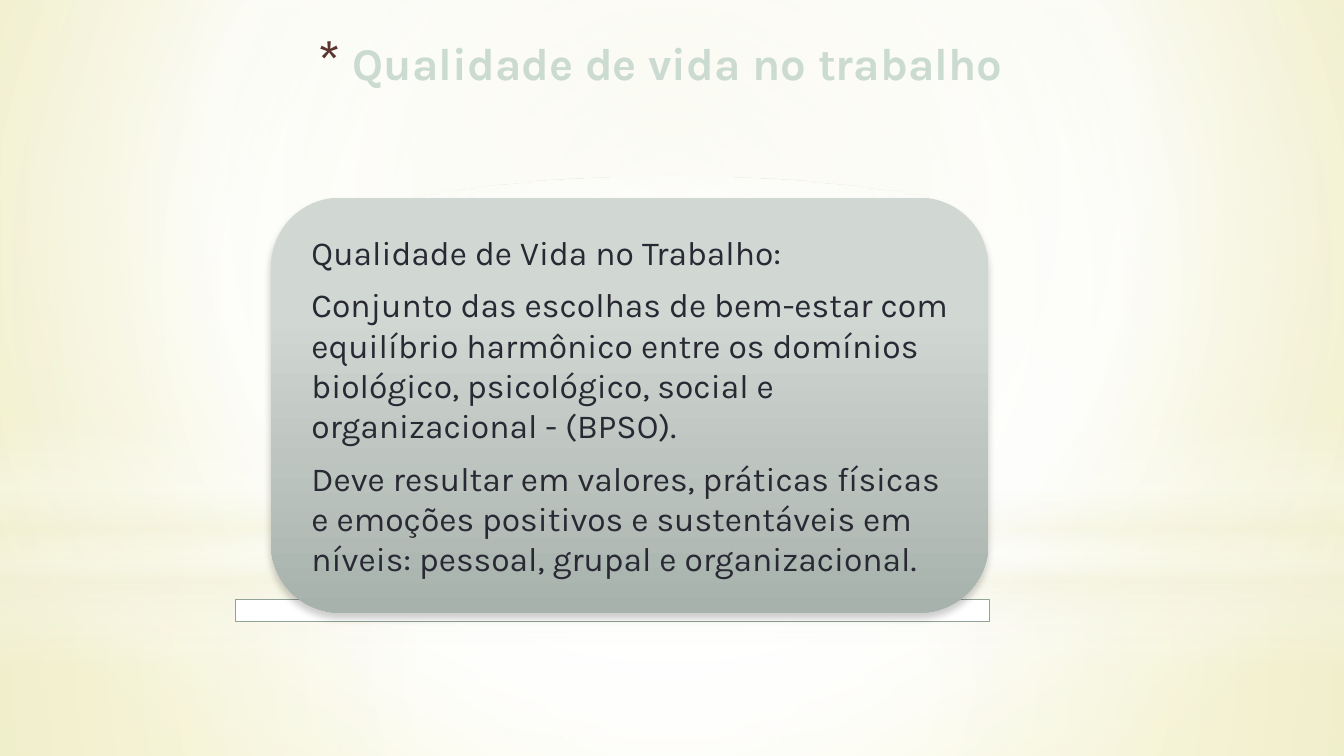
from lxml import etree
from pptx import Presentation
from pptx.dml.color import RGBColor
from pptx.enum.shapes import MSO_SHAPE as Kind
from pptx.enum.text import MSO_ANCHOR as Anchor, PP_ALIGN as Align
from pptx.oxml import parse_xml
from pptx.oxml.ns import nsdecls, qn
from pptx.util import Cm, Pt

WIDE, HIGH = 33.87, 19.05
CENTRE = (50, 50, 50, 50)


def tint(code):
    return RGBColor.from_string(code)


def blend(owner, root, stops, focus=None):
    """Fill owner with (position, colour, opacity) stops, circular if focus is given."""
    owner.fill.gradient()
    old = root.find(".//" + qn("a:gradFill"))
    marks = "".join(
        f'<a:gs pos="{pos * 1000}"><a:srgbClr val="{code}">'
        f'<a:alpha val="{alpha * 1000}"/></a:srgbClr></a:gs>'
        for pos, code, alpha in stops)
    if focus:
        sides = " ".join(f'{side}="{part * 1000}"' for side, part in zip("ltrb", focus))
        way = f'<a:path path="circle"><a:fillToRect {sides}/></a:path>'
    else:
        way = '<a:lin ang="5400000" scaled="0"/>'
    new = parse_xml(f'<a:gradFill {nsdecls("a")} rotWithShape="1">'
                    f'<a:gsLst>{marks}</a:gsLst>{way}</a:gradFill>')
    old.getparent().replace(old, new)


class Deck:
    font = "Karla"
    ink = "292934"
    pale = "CBDBD1"
    accent = "5B352E"

    def __init__(self):
        self.file = Presentation()
        self.file.slide_width, self.file.slide_height = Cm(WIDE), Cm(HIGH)
        self.slide = self.file.slides.add_slide(self.file.slide_layouts[5])

    def ground(self, stops, focus):
        blend(self.slide.background, self.slide.element, stops, focus)

    def shape(self, kind, box, stops=None, focus=None):
        form = self.slide.shapes.add_shape(kind, *map(Cm, box))
        form.shadow.inherit = False
        form.line.fill.background()
        if stops:
            blend(form, form.element, stops, focus)
        return form

    def strip(self, box, fill, line):
        form = self.shape(Kind.RECTANGLE, box)
        form.fill.solid()
        form.fill.fore_color.rgb = tint(fill)
        form.line.color.rgb = tint(line)
        form.line.width = Pt(0.75)

    def card(self, box, stops):
        form = self.shape(Kind.ROUNDED_RECTANGLE, box, stops)
        effects = form.element.find(".//" + qn("a:effectLst"))
        shade = etree.SubElement(effects, qn("a:outerShdw"), blurRad=str(Pt(5)),
                                 dist=str(Pt(4)), dir="5400000", rotWithShape="0")
        colour = etree.SubElement(shade, qn("a:srgbClr"), val="000000")
        etree.SubElement(colour, qn("a:alpha"), val="20000")

    def style(self, para, text, size, code, bold=False):
        para.text = text
        para.font.name, para.font.size = self.font, Pt(size)
        para.font.bold, para.font.color.rgb = bold, tint(code)

    def title(self, box, text):
        head = self.slide.shapes.title
        head.left, head.top, head.width, head.height = map(Cm, box)
        head.element.getparent().append(head.element)  # in front of the backdrop
        frame = head.text_frame
        frame.word_wrap, frame.vertical_anchor = True, Anchor.TOP
        para = frame.paragraphs[0]
        self.style(para, text, 32.4, self.pale, True)
        para.alignment = Align.RIGHT
        props = head.element.find(".//" + qn("a:pPr"))
        props.set("marL", str(Cm(0.89)))
        props.set("indent", str(Cm(-0.89)))
        bullet = parse_xml(
            f'<a:pPr {nsdecls("a")}><a:buClr><a:srgbClr val="{self.accent}"/></a:buClr>'
            f'<a:buSzPct val="128000"/><a:buFont typeface="{self.font}"/>'
            '<a:buChar char="*"/></a:pPr>')
        spot = props.find(qn("a:defRPr"))
        for part in list(bullet):
            spot.addprevious(part)

    def text(self, box, lines):
        frame = self.slide.shapes.add_textbox(*map(Cm, box)).text_frame
        frame.word_wrap, frame.vertical_anchor = True, Anchor.MIDDLE
        frame.margin_left = frame.margin_right = Cm(0.51)
        frame.margin_top = frame.margin_bottom = 0
        for i, line in enumerate(lines):
            para = frame.add_paragraph() if i else frame.paragraphs[0]
            self.style(para, line, 24, self.ink)
            para.space_after = Pt(8.4)


def main():
    deck = Deck()
    white, cream = "FFFFFF", "F3F2DC"
    deck.ground([(0, "EFEDCC", 100), (60, white, 100), (100, "E9E58A", 100)],
                (20, 10, 20, 60))
    split = 14.17
    deck.shape(Kind.RECTANGLE, (0, split, WIDE, HIGH - split),
               [(0, white, 91), (37, white, 76), (100, cream, 79)], CENTRE)
    deck.shape(Kind.RECTANGLE, (0, 0, WIDE, split),
               [(0, white, 89), (48, white, 62), (100, cream, 79)], CENTRE)
    deck.shape(Kind.RECTANGLE, (0, 10.46, WIDE, 6.35),
               [(0, white, 0), (29, white, 30), (45, cream, 40),
                (55, white, 26), (65, cream, 60), (100, white, 0)])
    deck.shape(Kind.OVAL, (0, 4.44, WIDE, split),
               [(0, white, 100), (56, white, 0)], CENTRE)

    deck.title((6.93, 0.76, 18.59, 2.36), "Qualidade de vida no trabalho")
    deck.strip((5.94, 15.11, 19, 0.56), white, "93A299")
    deck.card((6.83, 4.98, 18.08, 10.46), [(28, "D1D7D3", 100), (100, "A8B2AC", 100)])
    deck.text((7.34, 5.49, 17.07, 9.45), [
        "Qualidade de Vida no Trabalho:",
        "Conjunto das escolhas de bem-estar com equilíbrio harmônico entre os domínios "
        "biológico, psicológico, social e organizacional - (BPSO).",
        "Deve resultar em valores, práticas físicas e emoções positivos e sustentáveis "
        "em níveis: pessoal, grupal e organizacional.",
    ])
    deck.file.save("out.pptx")


if __name__ == "__main__":
    main()
